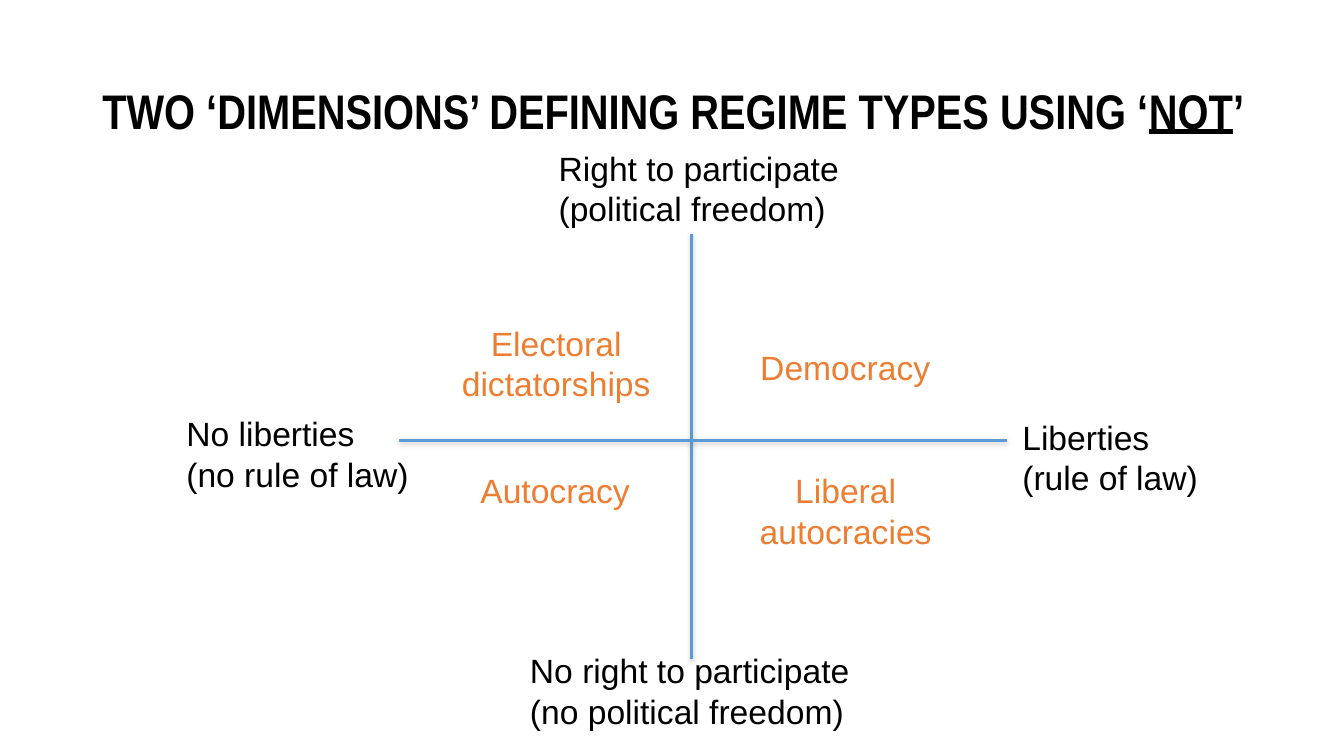
from lxml import etree
from pptx import Presentation
from pptx import util as u
from pptx.dml.color import RGBColor
from pptx.enum import shapes, text
from pptx.oxml.ns import qn

COLORS = {"ink": "000000", "axis": "5B9BD5", "regime": "ED7D31", "shadow": "808080"}
TITLE = ["TWO ‘DIMENSIONS’ DEFINING REGIME TYPES USING ‘", "NOT", "’"]
TITLE_PLACE = (11, 4.8, 141.8, 17.4)
AXES = [(82.3, 27.8, 82.3, 78.5), (47.5, 52.4, 119.8, 52.4)]
TWO_LINES, ONE_LINE = 10.9, 6
AXIS_ENDS = [
    ("No right to participate\n(no political freedom)", (61.9, 76.8, 40.8, TWO_LINES)),
    ("Right to participate\n(political freedom)", (65.3, 17, 36.1, TWO_LINES)),
    ("No liberties\n(no rule of law)", (21, 48.6, 29.2, TWO_LINES)),
    ("Liberties\n(rule of law)", (120.5, 49, 23.5, TWO_LINES)),
]
SHORT_REGIMES = [
    ("Democracy", (89.3, 40.7, 22.9, ONE_LINE)),
    ("Autocracy", (56, 55.4, 20.4, TWO_LINES)),
]
LONG_REGIMES = [
    ("Electoral dictatorships", (51.1, 37.8, 30.2, TWO_LINES)),
    ("Liberal autocracies", (85.4, 55.4, 30.5, TWO_LINES)),
]

deck = Presentation()
deck.slide_width, deck.slide_height = u.Inches(13.33), u.Inches(7.5)
page = deck.slides.add_slide(deck.slide_layouts[6])
CELL = deck.slide_height / 90


def grid(place):
    return [round(cells * CELL) for cells in place]


def style(font, name, size, color, bold=False):
    font.name, font.size, font.bold = name, u.Pt(size), bold
    font.color.rgb = RGBColor.from_string(COLORS[color])


def add_title():
    box = page.shapes.add_textbox(*grid(TITLE_PLACE))
    frame = box.text_frame
    frame.word_wrap = True
    frame.vertical_anchor = text.MSO_ANCHOR.MIDDLE
    para = frame.paragraphs[0]
    para.line_spacing = 0.9
    for words in TITLE:
        span = para.add_run()
        span.text = words
        style(span.font, "Arial Narrow", 34.7, "ink", True)
        span.font.underline = words == "NOT"


def add_axis(ends):
    line = page.shapes.add_connector(shapes.MSO_CONNECTOR.STRAIGHT, *grid(ends))
    line.line.width = u.Pt(2)
    line.line.color.rgb = RGBColor.from_string(COLORS["axis"])
    effects = etree.SubElement(line._element.spPr, qn("a:effectLst"))
    shadow = etree.SubElement(effects, qn("a:outerShdw"), blurRad="40000",
                              dist="20000", dir="5400000", rotWithShape="0")
    color = etree.SubElement(shadow, qn("a:srgbClr"), val=COLORS["shadow"])
    etree.SubElement(color, qn("a:alpha"), val="38000")


def add_label(words, place, color, wrapped=False):
    frame = page.shapes.add_textbox(*grid(place)).text_frame
    frame.text = words
    frame.word_wrap = wrapped
    for para in frame.paragraphs:
        para.alignment = text.PP_ALIGN.CENTER if wrapped else text.PP_ALIGN.LEFT
        for span in para.runs:
            style(span.font, "Arial", 24, color)


add_title()
for ends in AXES:
    add_axis(ends)
for words, place in AXIS_ENDS:
    add_label(words, place, "ink")
for words, place in SHORT_REGIMES:
    add_label(words, place, "regime")
for words, place in LONG_REGIMES:
    add_label(words, place, "regime", wrapped=True)

deck.save("out.pptx")
